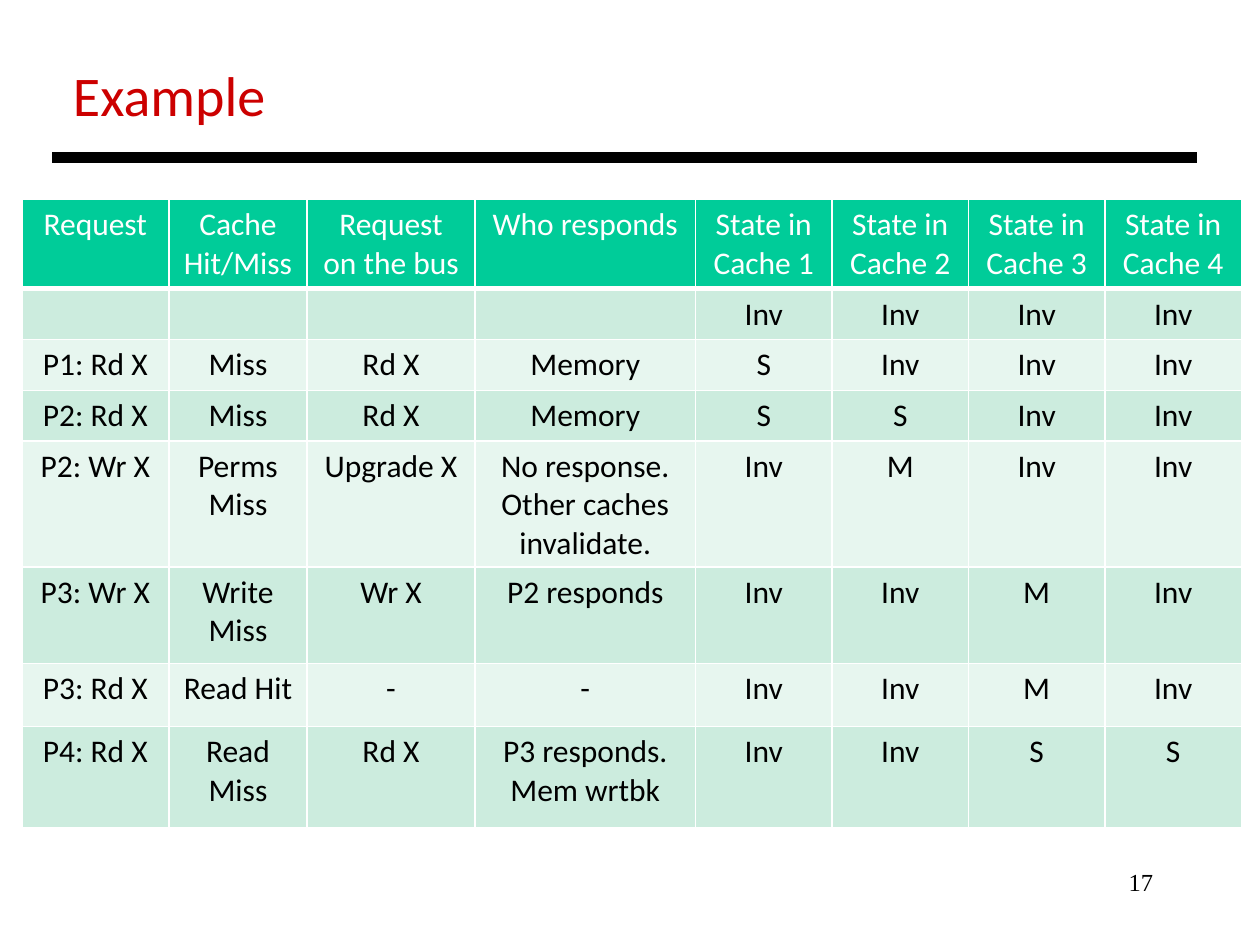
from dataclasses import dataclass

from lxml import etree
from pptx import Presentation
from pptx.dml.color import RGBColor
from pptx.enum.shapes import MSO_CONNECTOR
from pptx.enum.text import MSO_ANCHOR, MSO_AUTO_SIZE, PP_ALIGN
from pptx.oxml.ns import qn
from pptx.util import Pt

STRAIGHT = MSO_CONNECTOR.STRAIGHT
TOP = MSO_ANCHOR.TOP
NO_AUTO_SIZE = MSO_AUTO_SIZE.NONE
LEFT, CENTER, RIGHT = PP_ALIGN.LEFT, PP_ALIGN.CENTER, PP_ALIGN.RIGHT
TITLE_ONLY = 5


@dataclass(frozen=True)
class Theme:
    title: str = "CC0000"
    ink: str = "000000"
    white: str = "FFFFFF"
    header: str = "00CC99"
    bands: tuple = ("CCECDE", "E7F6EF")
    body_font: str = "Calibri"
    number_font: str = "Times New Roman"
    title_size: int = 32
    table_size: int = 18
    number_size: int = 14


THEME = Theme()

COLUMN_WIDTHS = [84, 79, 96, 126] + [78] * 4
ROW_HEIGHTS = [51, 29, 29, 29, 72, 55, 36, 58]
HEADERS = ["Request", "Cache\nHit/Miss", "Request\non the bus", "Who responds"] + [
    f"State in Cache {number}" for number in range(1, 5)
]
# Request, hit or miss, bus request, responder, states of caches 1 to 4
STEPS = [
    ("", "", "", "", "Inv Inv Inv Inv"),
    ("P1: Rd X", "Miss", "Rd X", "Memory", "S Inv Inv Inv"),
    ("P2: Rd X", "Miss", "Rd X", "Memory", "S S Inv Inv"),
    ("P2: Wr X", "Perms Miss", "Upgrade X",
     "No response.\nOther caches invalidate.", "Inv M Inv Inv"),
    ("P3: Wr X", "Write Miss", "Wr X", "P2 responds", "Inv Inv M Inv"),
    ("P3: Rd X", "Read Hit", "-", "-", "Inv Inv M Inv"),
    ("P4: Rd X", "Read Miss", "Rd X", "P3 responds. Mem wrtbk", "Inv Inv S S"),
]


def write_text(text_frame, text, font, size, color, alignment):
    text_frame.text = text
    for paragraph in text_frame.paragraphs:
        paragraph.alignment = alignment
        paragraph.font.name = font
        paragraph.font.size = Pt(size)
        paragraph.font.color.rgb = RGBColor.from_string(color)


def add_title(slide, text):
    title = slide.shapes.title
    title.left, title.top, title.width, title.height = Pt(34.5), Pt(31), Pt(126), Pt(46)
    frame = title.text_frame
    write_text(frame, text, THEME.body_font, THEME.title_size, THEME.title, LEFT)
    frame.vertical_anchor = TOP
    frame.word_wrap = False
    frame.auto_size = NO_AUTO_SIZE


def add_title_rule(slide):
    rule = slide.shapes.add_connector(STRAIGHT, Pt(30), Pt(90), Pt(684), Pt(90))
    rule.line.width = Pt(6)
    rule.line.color.rgb = RGBColor.from_string(THEME.ink)
    etree.SubElement(rule._element.spPr, qn("a:effectLst"))


def add_slide_number(slide, number):
    box = slide.shapes.add_textbox(Pt(516), Pt(492), Pt(150), Pt(36))
    box.text_frame.word_wrap = True
    write_text(box.text_frame, number, THEME.number_font, THEME.number_size,
               THEME.ink, RIGHT)


def set_borders(cell, color, bottom_width):
    """Draw all four cell edges; call before filling, as lines precede the fill."""
    properties = cell._tc.get_or_add_tcPr()
    for edge, width in (("L", 1), ("R", 1), ("T", 1), ("B", bottom_width)):
        line = etree.SubElement(properties, qn(f"a:ln{edge}"), w=str(Pt(width)))
        fill = etree.SubElement(line, qn("a:solidFill"))
        etree.SubElement(fill, qn("a:srgbClr"), val=color)


def format_cell(cell, text, fill, color, bottom_width):
    set_borders(cell, THEME.white, bottom_width)
    cell.fill.solid()
    cell.fill.fore_color.rgb = RGBColor.from_string(fill)
    write_text(cell.text_frame, text, THEME.body_font, THEME.table_size, color, CENTER)


def add_coherence_table(slide):
    rows = [HEADERS] + [[*step, *states.split()] for *step, states in STEPS]
    table = slide.shapes.add_table(
        len(rows), len(HEADERS), Pt(12.5), Pt(114),
        Pt(sum(COLUMN_WIDTHS)), Pt(sum(ROW_HEIGHTS))).table
    for column, width in zip(table.columns, COLUMN_WIDTHS):
        column.width = Pt(width)
    for row, height in zip(table.rows, ROW_HEIGHTS):
        row.height = Pt(height)
    for row_index, texts in enumerate(rows):
        if row_index == 0:
            style = (THEME.header, THEME.white, 3)
        else:
            style = (THEME.bands[(row_index - 1) % 2], THEME.ink, 1)
        for column_index, text in enumerate(texts):
            format_cell(table.cell(row_index, column_index), text, *style)
        if row_index == 0:
            for cell in table.rows[0].cells:
                for paragraph in cell.text_frame.paragraphs:
                    paragraph.font.bold = False


def main():
    presentation = Presentation()
    presentation.slide_width, presentation.slide_height = Pt(720), Pt(540)
    slide = presentation.slides.add_slide(presentation.slide_layouts[TITLE_ONLY])
    add_slide_number(slide, "17")
    add_title(slide, "Example")
    add_title_rule(slide)
    add_coherence_table(slide)
    presentation.save("out.pptx")


if __name__ == "__main__":
    main()
